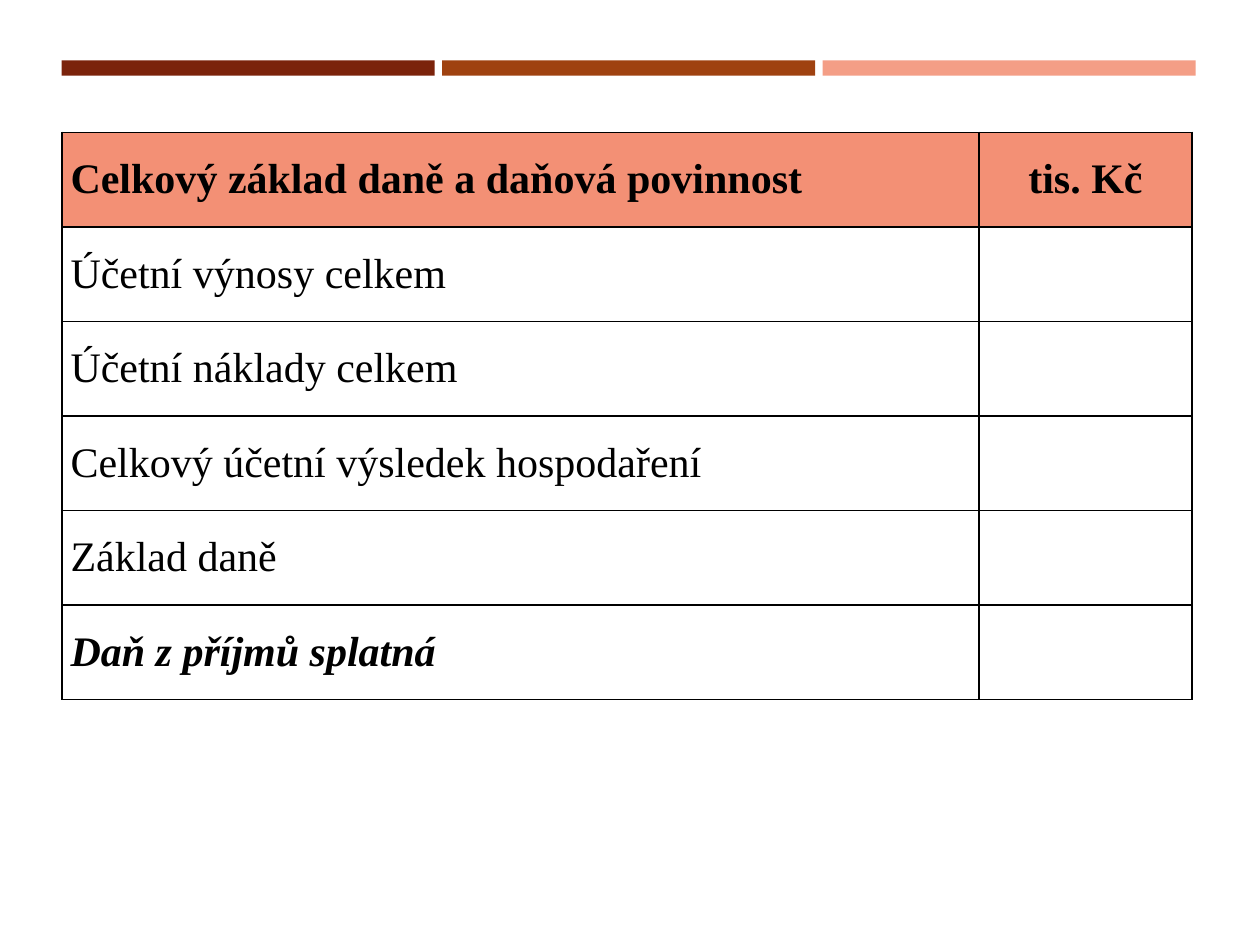
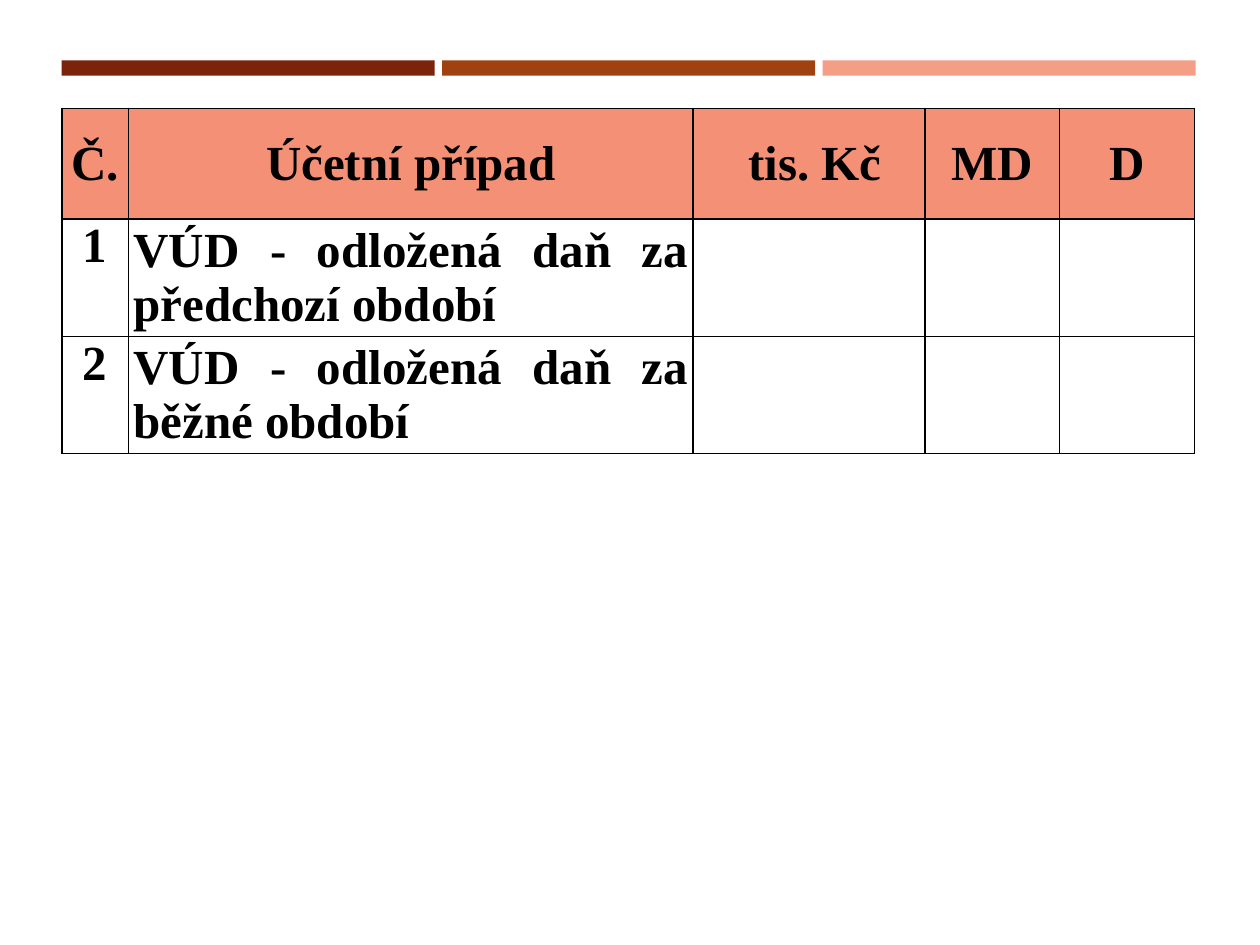
from dataclasses import dataclass

import lxml.etree
import pptx
import pptx.dml.color
import pptx.enum.shapes
import pptx.enum.text
import pptx.oxml.ns
import pptx.presentation
import pptx.slide
import pptx.table
import pptx.util

Inches = pptx.util.Inches
Align = pptx.enum.text.PP_ALIGN
Anchor = pptx.enum.text.MSO_ANCHOR
RGBColor = pptx.dml.color.RGBColor

BLACK = RGBColor(0x00, 0x00, 0x00)
HEADER_FILL = RGBColor(0xF3, 0x90, 0x75)
BAND_COLOURS = (
    RGBColor(0x7B, 0x23, 0x0B),
    RGBColor(0x9F, 0x42, 0x10),
    RGBColor(0xF4, 0x9E, 0x86),
)
FONT = "Times New Roman"
MARGIN = 0.49
BAND_TOP, BAND_WIDTH, BAND_HEIGHT, BAND_STEP = 0.48, 2.96, 0.12, 3.02


@dataclass(frozen=True)
class CellStyle:
    align: Align = Align.JUSTIFY
    anchor: Anchor = Anchor.MIDDLE
    bold: bool = False
    italic: bool = False


@dataclass(frozen=True)
class CellText:
    text: str = ""
    style: CellStyle = CellStyle()


@dataclass(frozen=True)
class TableSpec:
    top: float
    columns: tuple[float, ...]
    row_heights: tuple[float, ...]
    side_inset: float
    font_size: int
    rows: tuple[tuple[CellText, ...], ...]


HEADING_LEFT = CellStyle(Align.LEFT, bold=True)
HEADING = CellStyle(Align.CENTER, bold=True)
NUMBER = CellStyle(Align.CENTER, Anchor.TOP, bold=True)
ENTRY = CellStyle(bold=True)
RESULT = CellStyle(bold=True, italic=True)
EMPTY = CellText()

TAX_BASE = TableSpec(
    top=1.05,
    columns=(7.28, 1.69),
    row_heights=(0.75,) * 6,
    side_inset=0.07,
    font_size=24,
    rows=(
        (CellText("Celkový základ daně a daňová povinnost", HEADING_LEFT),
         CellText("tis. Kč", HEADING)),
        (CellText("Účetní výnosy celkem"), EMPTY),
        (CellText("Účetní náklady celkem"), EMPTY),
        (CellText("Celkový účetní výsledek hospodaření"), EMPTY),
        (CellText("Základ daně"), EMPTY),
        (CellText("Daň z příjmů splatná", RESULT), EMPTY),
    ),
)

DEFERRED_TAX = TableSpec(
    top=0.86,
    columns=(0.53, 4.48, 1.84, 1.07, 1.07),
    row_heights=(0.88, 0.93, 0.93),
    side_inset=0.04,
    font_size=28,
    rows=(
        tuple(CellText(text, HEADING)
              for text in ("Č.", "Účetní případ", " tis. Kč", "MD", "D")),
        (CellText("1", NUMBER),
         CellText("VÚD - odložená daň za předchozí období", ENTRY),
         EMPTY, EMPTY, EMPTY),
        (CellText("2", NUMBER),
         CellText("VÚD - odložená daň za běžné období", ENTRY),
         EMPTY, EMPTY, EMPTY),
    ),
)


def add_bands(page: pptx.slide.Slide) -> None:
    for index, colour in enumerate(BAND_COLOURS):
        band = page.shapes.add_shape(
            pptx.enum.shapes.MSO_SHAPE.RECTANGLE,
            Inches(MARGIN + index * BAND_STEP), Inches(BAND_TOP),
            Inches(BAND_WIDTH), Inches(BAND_HEIGHT),
        )
        band.shadow.inherit = False
        band.fill.solid()
        band.fill.fore_color.rgb = colour
        band.line.fill.background()


def add_borders(cell: pptx.table._Cell) -> None:
    """Draw a thin black line on all four sides; call before setting the fill."""
    qualify = pptx.oxml.ns.qn
    properties = cell._tc.get_or_add_tcPr()
    for side in ("a:lnL", "a:lnR", "a:lnT", "a:lnB"):
        line = lxml.etree.SubElement(
            properties, qualify(side), w=str(pptx.util.Pt(1)))
        fill = lxml.etree.SubElement(line, qualify("a:solidFill"))
        lxml.etree.SubElement(fill, qualify("a:srgbClr"), val=str(BLACK))


def fill_cell(cell: pptx.table._Cell, content: CellText,
              layout: TableSpec, is_header: bool) -> None:
    add_borders(cell)
    if is_header:
        cell.fill.solid()
        cell.fill.fore_color.rgb = HEADER_FILL
    else:
        cell.fill.background()
    cell.margin_left = cell.margin_right = Inches(layout.side_inset)
    cell.margin_top = cell.margin_bottom = 0
    if not content.text:
        return
    cell.vertical_anchor = content.style.anchor
    para = cell.text_frame.paragraphs[0]
    para.alignment = content.style.align
    span = para.add_run()
    span.text = content.text
    span.font.name = FONT
    span.font.size = pptx.util.Pt(layout.font_size)
    span.font.bold = content.style.bold
    span.font.italic = content.style.italic
    span.font.color.rgb = BLACK


def add_table(page: pptx.slide.Slide, layout: TableSpec) -> None:
    table = page.shapes.add_table(
        len(layout.rows), len(layout.columns),
        Inches(MARGIN), Inches(layout.top),
        Inches(sum(layout.columns)), Inches(sum(layout.row_heights)),
    ).table
    table.first_row = table.horz_banding = False
    for column, width in zip(table.columns, layout.columns):
        column.width = Inches(width)
    for row, height in zip(table.rows, layout.row_heights):
        row.height = Inches(height)
    for row_index, contents in enumerate(layout.rows):
        for column_index, content in enumerate(contents):
            fill_cell(table.cell(row_index, column_index), content,
                      layout, is_header=row_index == 0)


def add_page(deck: pptx.presentation.Presentation, layout: TableSpec) -> None:
    page = deck.slides.add_slide(deck.slide_layouts[6])
    add_bands(page)
    add_table(page, layout)


def main() -> None:
    deck = pptx.Presentation()
    deck.slide_width, deck.slide_height = Inches(10), Inches(7.5)
    for layout in (TAX_BASE, DEFERRED_TAX):
        add_page(deck, layout)
    deck.save("out.pptx")


if __name__ == "__main__":
    main()
